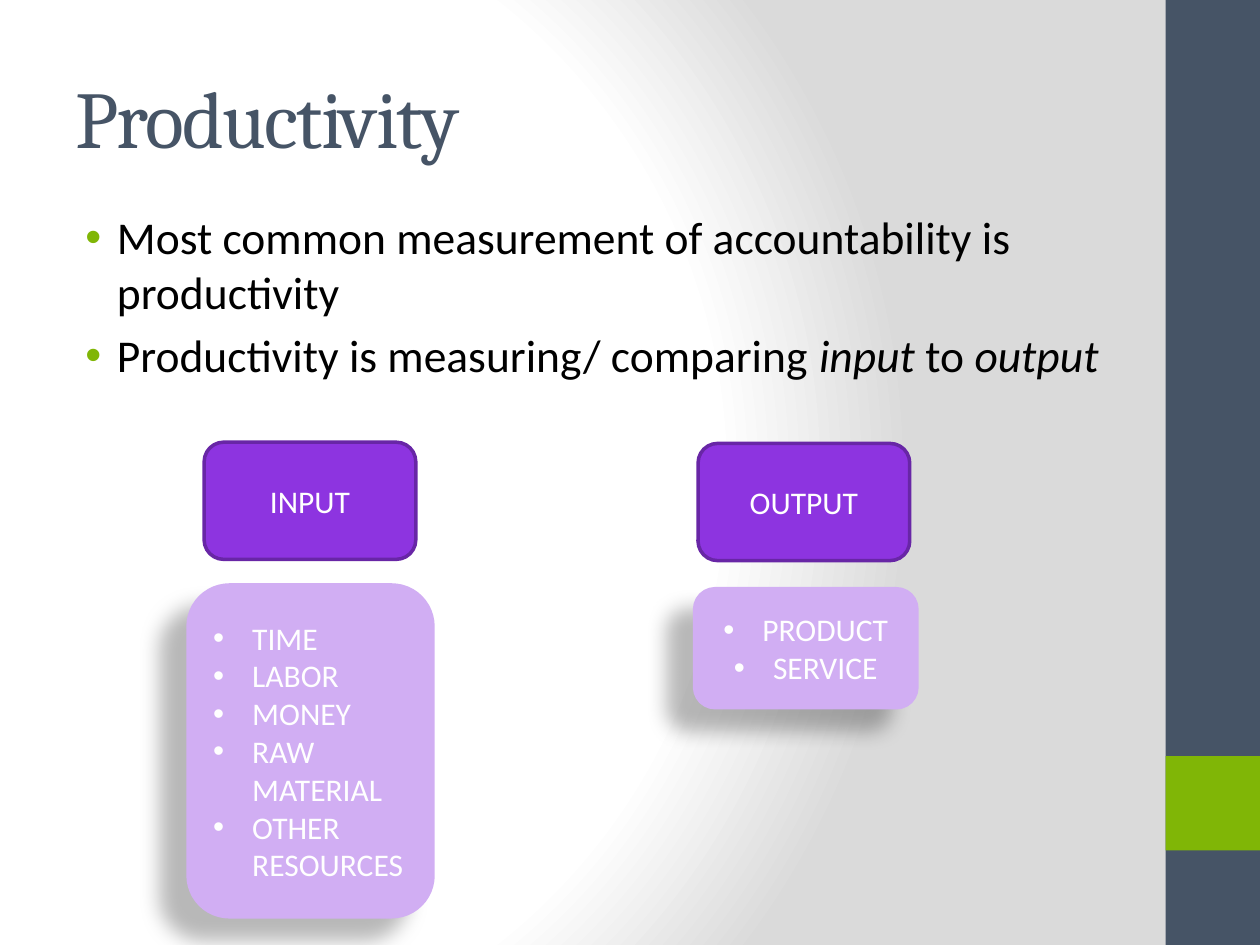
from dataclasses import dataclass

from lxml import etree
from pptx import Presentation
from pptx.dml.color import RGBColor
from pptx.enum.shapes import MSO_SHAPE
from pptx.enum.text import MSO_ANCHOR, PP_ALIGN
from pptx.oxml import parse_xml
from pptx.oxml.ns import nsdecls, qn
from pptx.util import Inches, Pt

RECT, ROUNDED = MSO_SHAPE.RECTANGLE, MSO_SHAPE.ROUNDED_RECTANGLE
LEFT, CENTER = PP_ALIGN.LEFT, PP_ALIGN.CENTER
TOP, MIDDLE = MSO_ANCHOR.TOP, MSO_ANCHOR.MIDDLE
WIDTH, HEIGHT = Inches(10), Inches(7.5)
SLATE, GREEN, BLACK, WHITE = "465466", "80B606", "000000", "FFFFFF"
PURPLE, PLUM, LILAC = "8D34E0", "6826A6", "D1AEF3"


@dataclass(frozen=True)
class Area:
    """Position and size in percent of the slide."""
    left: float
    top: float
    width: float
    height: float

    def lengths(self) -> tuple[int, ...]:
        """Return left, top, width and height as slide lengths."""
        return (int(WIDTH * self.left / 100), int(HEIGHT * self.top / 100),
                int(WIDTH * self.width / 100), int(HEIGHT * self.height / 100))


@dataclass(frozen=True)
class Group:
    """A heading box with the panel of items below it."""
    heading: str
    heading_area: Area
    items: tuple[str, ...]
    panel_area: Area
    align: PP_ALIGN


GROUPS = (
    Group("INPUT", Area(16.2, 46.8, 16.8, 12.4),
          ("TIME", "LABOR", "MONEY", "RAW MATERIAL", "OTHER RESOURCES"),
          Area(15, 62, 19.3, 34.93), LEFT),
    Group("OUTPUT", Area(55.4, 46.93, 16.8, 12.4),
          ("PRODUCT", "SERVICE"), Area(55.2, 62.4, 17.5, 12.4), CENTER),
)
STATEMENTS = (
    (("Most common measurement of accountability is productivity", False),),
    (("Productivity is measuring/ comparing ", False), ("input", True),
     (" to ", False), ("output", True)),
)


def rgb(color: str) -> RGBColor:
    """Turn a hex string into a colour."""
    return RGBColor.from_string(color)


def add_bullet(paragraph, indent: float, hanging: float, color: str) -> None:
    """Give a paragraph a coloured bullet and a hanging indent."""
    properties = paragraph._p.get_or_add_pPr()
    properties.set("marL", str(Inches(indent)))
    properties.set("indent", str(-Inches(hanging)))
    tint = etree.SubElement(properties, qn("a:buClr"))
    etree.SubElement(tint, qn("a:srgbClr"), val=color)
    etree.SubElement(properties, qn("a:buFont"), typeface="Arial")
    etree.SubElement(properties, qn("a:buChar"), char="•")


def write_text(shape, paragraphs, *, size=18, font="Calibri", color=WHITE, align=LEFT,
               anchor=MIDDLE, before=0, spacing=0, bullet=None) -> None:
    """Write paragraphs of (text, italic) runs into a shape."""
    frame = shape.text_frame
    frame.word_wrap = True
    frame.vertical_anchor = anchor
    for index, runs in enumerate(paragraphs):
        paragraph = frame.add_paragraph() if index else frame.paragraphs[0]
        paragraph.alignment = align
        paragraph.space_before = Pt(before)
        if bullet:
            add_bullet(paragraph, *bullet)
        for text, italic in runs:
            run = paragraph.add_run()
            run.text = text
            run.font.size, run.font.name = Pt(size), font
            run.font.italic = italic
            run.font.color.rgb = rgb(color)
            if spacing:
                run._r.get_or_add_rPr().set("spc", str(spacing * 100))


def add_box(slide, kind: MSO_SHAPE, area: Area, fill: str, line: str = "", weight: float = 0):
    """Draw a filled shape without a shadow."""
    box = slide.shapes.add_shape(kind, *area.lengths())
    box.shadow.inherit = False
    box.fill.solid()
    box.fill.fore_color.rgb = rgb(fill)
    if line:
        box.line.color.rgb = rgb(line)
        box.line.width = Pt(weight)
    else:
        box.line.fill.background()
    return box


def add_shadow(box) -> None:
    """Cast a soft shadow to the lower left."""
    effects = box._element.spPr.find(qn("a:effectLst"))
    shadow = etree.SubElement(effects, qn("a:outerShdw"), blurRad=str(Pt(11.8)),
                              dist=str(Pt(19.7)), dir=str(141 * 60000), rotWithShape="0")
    tint = etree.SubElement(shadow, qn("a:srgbClr"), val=BLACK)
    etree.SubElement(tint, qn("a:alpha"), val="28000")


def paint_background(slide) -> None:
    """Fill the background with a circular white to grey gradient."""
    slide.background.fill.gradient()
    linear = slide.element.find(".//" + qn("a:gradFill"))
    stops = "".join(f'<a:gs pos="{share * 1000}"><a:srgbClr val="{color}"/></a:gs>'
                    for share, color in ((0, WHITE), (75, WHITE), (100, "DADADA")))
    circular = parse_xml(
        f'<a:gradFill {nsdecls("a")} rotWithShape="1"><a:gsLst>{stops}</a:gsLst>'
        '<a:path path="circle"><a:fillToRect l="20000" t="50000" r="100000" b="50000"/>'
        '</a:path></a:gradFill>')
    linear.getparent().replace(linear, circular)


def add_group(slide, group: Group) -> None:
    """Draw a heading box and its panel."""
    heading = add_box(slide, ROUNDED, group.heading_area, PURPLE, PLUM, 2)
    write_text(heading, [[(group.heading, False)]], align=CENTER)
    panel = add_box(slide, ROUNDED, group.panel_area, LILAC, LILAC, 3)
    add_shadow(panel)
    write_text(panel, [[(item, False)] for item in group.items],
               align=group.align, bullet=(0.31, 0.31, WHITE))


def main() -> None:
    """Build and save the slide."""
    deck = Presentation()
    deck.slide_width, deck.slide_height = WIDTH, HEIGHT
    slide = deck.slides.add_slide(deck.slide_layouts[6])
    paint_background(slide)
    add_box(slide, RECT, Area(92.5, 0, 7.5, 100), SLATE)
    add_box(slide, RECT, Area(92.5, 80, 7.5, 10), GREEN)
    title = slide.shapes.add_textbox(*Area(5, 4, 83.3, 16.67).lengths())
    write_text(title, [[("Productivity", False)]], size=46, font="Cambria",
               color=SLATE, spacing=-1)
    body = slide.shapes.add_textbox(*Area(4.5, 21.47, 87.4, 70).lengths())
    write_text(body, STATEMENTS, size=26, color=BLACK, anchor=TOP, before=5.2,
               bullet=(0.38, 0.25, GREEN))
    for group in GROUPS:
        add_group(slide, group)
    deck.save("out.pptx")


if __name__ == "__main__":
    main()
